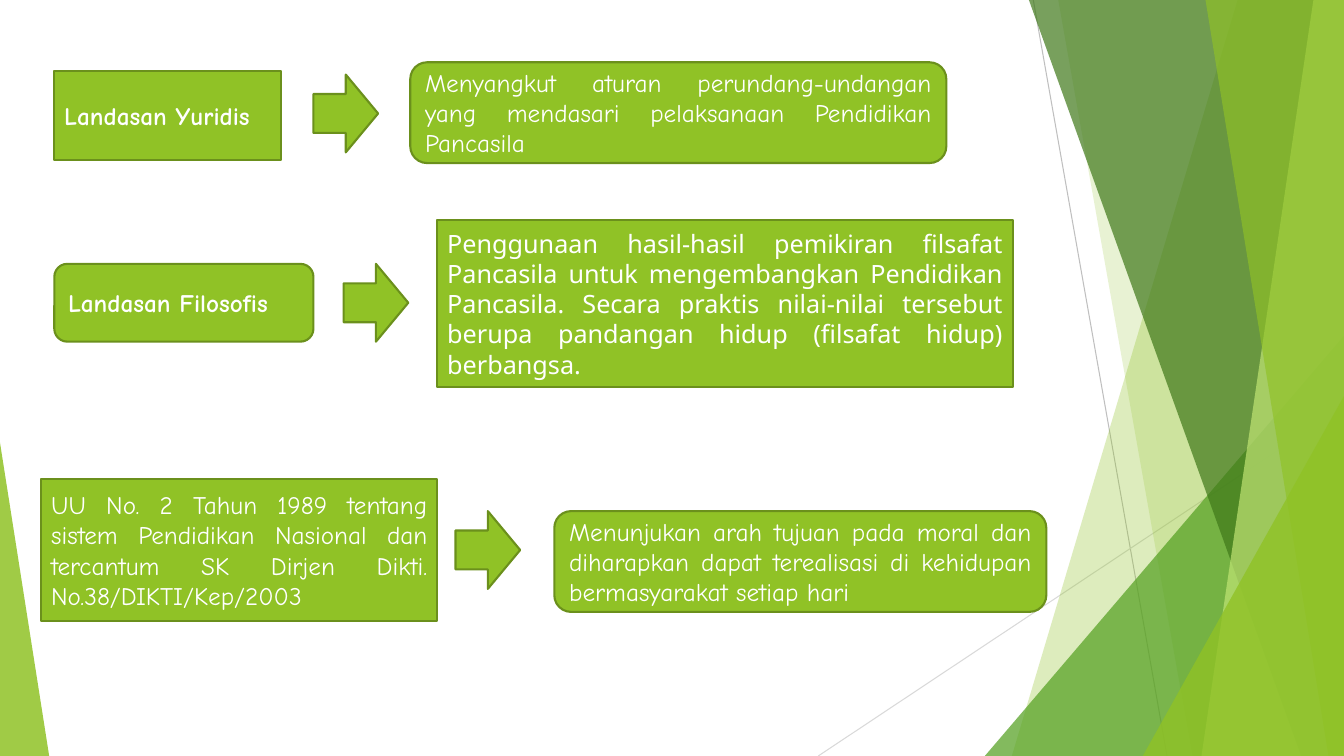
"""Build a slide on the foundations of Pancasila education, with a green facet backdrop."""
from lxml.etree import SubElement
from pptx import Presentation
from pptx.dml.color import RGBColor
from pptx.enum.shapes import MSO_CONNECTOR, MSO_SHAPE as SHAPE
from pptx.enum.text import MSO_ANCHOR, PP_ALIGN
from pptx.oxml.ns import qn
from pptx.util import Cm, Pt

GREEN = RGBColor(0x90, 0xC2, 0x26)
MID_GREEN = RGBColor(0x54, 0xA0, 0x21)
DARK_GREEN = RGBColor(0x3F, 0x78, 0x19)
PALE_GREEN = RGBColor(0xC0, 0xE4, 0x74)
OUTLINE = RGBColor(0x6B, 0x90, 0x1C)
GREY = RGBColor(0xBF, 0xBF, 0xBF)
LIGHT_GREY = RGBColor(0xD9, 0xD9, 0xD9)
WHITE = RGBColor(0xFF, 0xFF, 0xFF)
COMIC, NOTO = "Comic Neue", "Noto Sans"
RECT, ROUND = SHAPE.RECTANGLE, SHAPE.ROUNDED_RECTANGLE
W, H = 33.87, 19.05


def paint(s, color, opacity=100):
    """Fill a shape with a colour at an opacity in percent, without a shadow."""
    s.shadow.inherit = False
    s.fill.solid()
    s.fill.fore_color.rgb = color
    if opacity < 100:
        clr = s._element.spPr.find(qn("a:solidFill")).find(qn("a:srgbClr"))
        SubElement(clr, qn("a:alpha"), val=str(opacity * 1000))


prs = Presentation()
prs.slide_width, prs.slide_height = Cm(W), Cm(H)
slide = prs.slides.add_slide(prs.slide_layouts[6])
shapes = slide.shapes

for x1, y1, x2, y2, color in [
    (26.04, 0, 29.41, H, GREY),
    (W, 10.24, 20.62, H, LIGHT_GREY),
]:
    c = shapes.add_connector(MSO_CONNECTOR.STRAIGHT, Cm(x1), Cm(y1), Cm(x2), Cm(y2))
    c.line.color.rgb = color
    c.line.width = Pt(0.75)
    SubElement(c._element.spPr, qn("a:effectLst"))

# Bands give (top x, bottom x); triangles give (left, top, width, height, apex).
facets = [
    ((31.19, 25.5), GREEN, 30),
    ((26.67, 30.05), GREEN, 20),
    ((24.82, 8.46, 9.05, 10.59, 1), MID_GREEN, 72),
    ((25.93, 32.79), DARK_GREEN, 70),
    ((33.1, 30.28), PALE_GREEN, 70),
    ((30.38, 33.48), GREEN, 65),
    ((28.8, 9.98, 5.07, 9.07, 1), GREEN, 80),
    ((0, 11.15, 1.24, 7.9, 0), GREEN, 85),
]
for geometry, color, opacity in facets:
    if len(geometry) == 2:
        top_x, bottom_x = geometry
        fb = shapes.build_freeform(Cm(top_x), 0)
        fb.add_line_segments([(Cm(W), 0), (Cm(W), Cm(H)), (Cm(bottom_x), Cm(H))])
        s = fb.convert_to_shape()
    else:
        *box, apex = geometry
        s = shapes.add_shape(SHAPE.ISOSCELES_TRIANGLE, *map(Cm, box))
        s.adjustments[0] = apex
    paint(s, color, opacity)
    s.line.fill.background()

cards = [
    (RECT, (1.37, 1.78, 5.72, 2.26), COMIC, True, "Landasan Yuridis"),
    (ROUND, (10.34, 1.57, 13.51, 2.54), COMIC, False,
     "Menyangkut aturan perundang-undangan yang mendasari pelaksanaan "
     "Pendidikan Pancasila"),
    (ROUND, (1.37, 6.65, 6.53, 1.96), COMIC, True, "Landasan Filosofis"),
    (RECT, (11.02, 5.54, 14.5, 4.22), NOTO, False,
     "Penggunaan hasil-hasil pemikiran filsafat Pancasila untuk mengembangkan "
     "Pendidikan Pancasila. Secara praktis nilai-nilai tersebut berupa "
     "pandangan hidup (filsafat hidup) berbangsa."),
    (RECT, (1.04, 12.07, 9.98, 3.58), COMIC, False,
     "UU No. 2 Tahun 1989 tentang sistem Pendidikan Nasional dan tercantum "
     "SK Dirjen Dikti. No.38/DIKTI/Kep/2003"),
    (ROUND, (13.97, 12.88, 12.4, 2.54), COMIC, False,
     "Menunjukan arah tujuan pada moral dan diharapkan dapat terealisasi di "
     "kehidupan bermasyarakat setiap hari"),
]
arrows = [
    (SHAPE.RIGHT_ARROW, (x, y, 1.63, 1.96), COMIC, False, "")
    for x, y in [(7.9, 1.88), (8.66, 6.65), (11.48, 12.88)]
]
for kind, box, font, bold, text in cards + arrows:
    s = shapes.add_shape(kind, *map(Cm, box))
    paint(s, GREEN)
    s.line.color.rgb = OUTLINE
    s.line.width = Pt(1.5)
    if text:
        tf = s.text_frame
        tf.word_wrap = True
        tf.vertical_anchor = MSO_ANCHOR.MIDDLE
        p = tf.paragraphs[0]
        p.text = text
        p.alignment = PP_ALIGN.JUSTIFY
        p.font.name = font
        p.font.size = Pt(18)
        p.font.bold = bold
        p.font.color.rgb = WHITE

prs.save("out.pptx")
